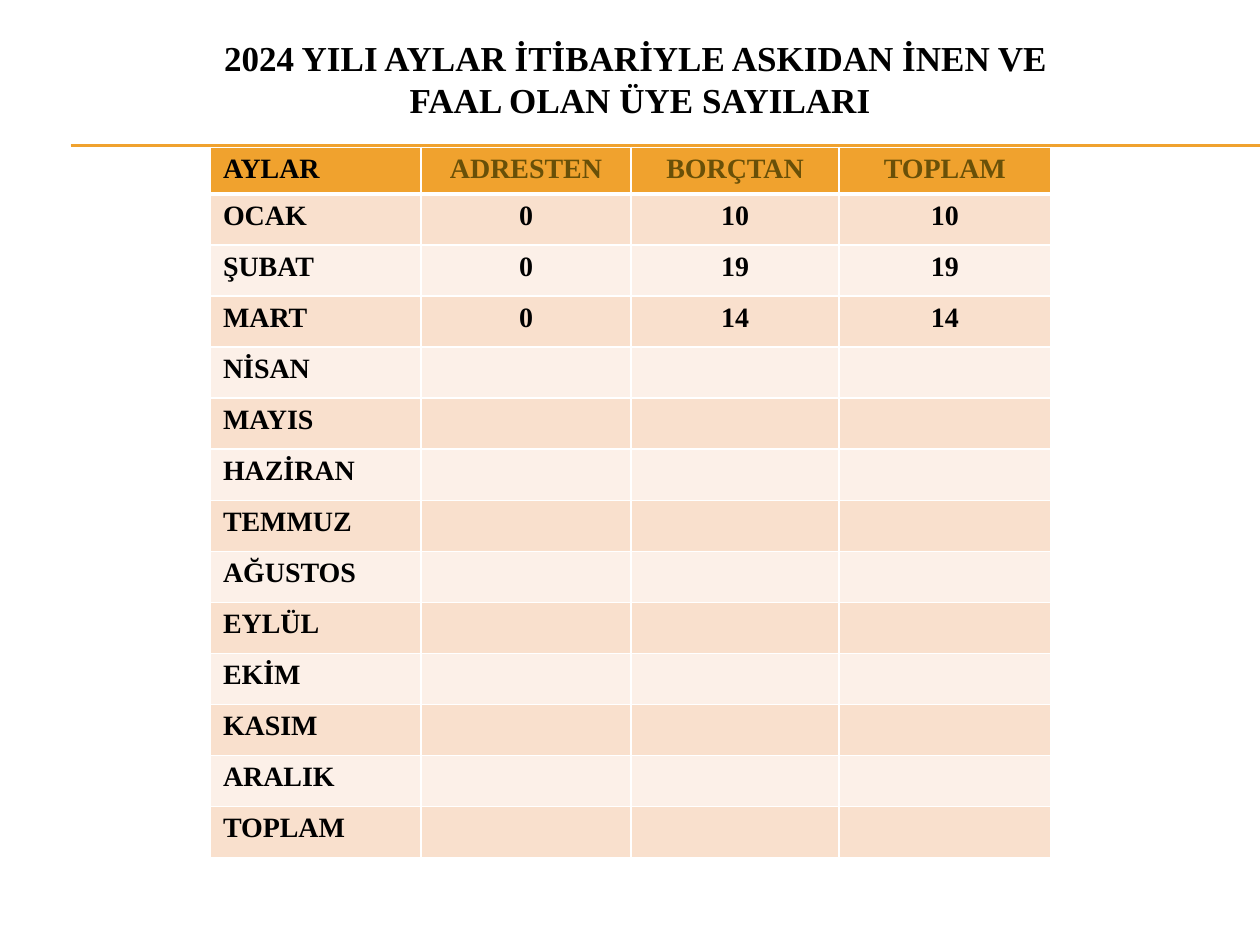
from dataclasses import dataclass

from lxml.etree import SubElement
from pptx import Presentation
from pptx.dml.color import RGBColor as RGB
from pptx.enum.shapes import MSO_CONNECTOR as CONN
from pptx.enum.text import MSO_ANCHOR as ANCHOR, PP_ALIGN as ALIGN
from pptx.oxml.ns import qn
from pptx.util import Inches, Pt


@dataclass(frozen=True)
class Theme:
    font: str = "Times New Roman"
    text: str = "000000"
    heading: str = "695008"
    accent: str = "F0A22E"
    bands: tuple = ("F9E0CD", "FCF0E8")
    border: str = "FFFFFF"
    title_size: int = 20
    table_size: int = 16


class SlideBuilder:
    def __init__(self, slide, theme):
        self.slide, self.theme = slide, theme

    def style(self, p, size, color, align):
        p.alignment = align
        p.font.name, p.font.size, p.font.bold = self.theme.font, Pt(size), True
        p.font.color.rgb = RGB.from_string(color)

    def title(self, lines, x, y, w, h):
        tf = self.slide.shapes.add_textbox(*map(Inches, (x, y, w, h))).text_frame
        tf.word_wrap = True
        tf.vertical_anchor = ANCHOR.MIDDLE
        p = tf.paragraphs[0]
        p.text = "\v".join(lines)
        self.style(p, self.theme.title_size, self.theme.text, ALIGN.CENTER)

    def rule(self, x1, x2, y):
        line = self.slide.shapes.add_connector(
            CONN.STRAIGHT, *map(Inches, (x1, y, x2, y)))
        line.line.color.rgb = RGB.from_string(self.theme.accent)
        line.line.width = Pt(0.75)
        SubElement(line._element.spPr, qn("a:effectLst"))

    def borders(self, cell, **widths):
        tcPr = cell._tc.get_or_add_tcPr()
        for side in "LRTB":
            ln = SubElement(tcPr, qn(f"a:ln{side}"), w=str(Pt(widths.get(side, 1))))
            fill = SubElement(ln, qn("a:solidFill"))
            SubElement(fill, qn("a:srgbClr"), val=self.theme.border)

    def table(self, rows, x, y, widths, head_h, row_h):
        t = self.theme
        height = head_h + row_h * (len(rows) - 1)
        table = self.slide.shapes.add_table(
            len(rows), len(widths),
            *map(Inches, (x, y, sum(widths), height))).table
        for col, width in zip(table.columns, widths):
            col.width = Inches(width)
        for i, values in enumerate(rows):
            table.rows[i].height = Inches(row_h if i else head_h)
            for j, cell in enumerate(table.rows[i].cells):
                # Thick line between the header and the months
                self.borders(cell, B=1 if i else 3, T=3 if i == 1 else 1)
                cell.fill.solid()
                cell.fill.fore_color.rgb = RGB.from_string(
                    t.bands[(i - 1) % 2] if i else t.accent)
                p = cell.text_frame.paragraphs[0]
                if j < len(values):
                    p.text = values[j]
                self.style(p, t.table_size, t.text if i or not j else t.heading,
                           ALIGN.CENTER if j else ALIGN.LEFT)


def main():
    prs = Presentation()
    prs.slide_width, prs.slide_height = Inches(10), Inches(7.5)
    s = SlideBuilder(prs.slides.add_slide(prs.slide_layouts[6]), Theme())

    # Double rule under the title
    for y in (1.15, 1.16):
        s.rule(0.56, 10, y)

    # Title
    s.title(["2024 YILI AYLAR İTİBARİYLE ASKIDAN İNEN VE ",
             "FAAL OLAN ÜYE SAYILARI"], 0.33, 0.16, 9.5, 0.92)

    # Monthly table; months without figures stay empty
    rows = [
        ["AYLAR", "ADRESTEN", "BORÇTAN", "TOPLAM"],
        ["OCAK", "0", "10", "10"],
        ["ŞUBAT", "0", "19", "19"],
        ["MART", "0", "14", "14"],
    ]
    rows += [[month] for month in (
        "NİSAN", "MAYIS", "HAZİRAN", "TEMMUZ", "AĞUSTOS", "EYLÜL",
        "EKİM", "KASIM", "ARALIK", "TOPLAM")]
    s.table(rows, 1.67, 1.17, [1.67, 1.67, 1.65, 1.68],
            head_h=0.37, row_h=(5.64 - 0.37) / 13)

    prs.save("out.pptx")


if __name__ == "__main__":
    main()
